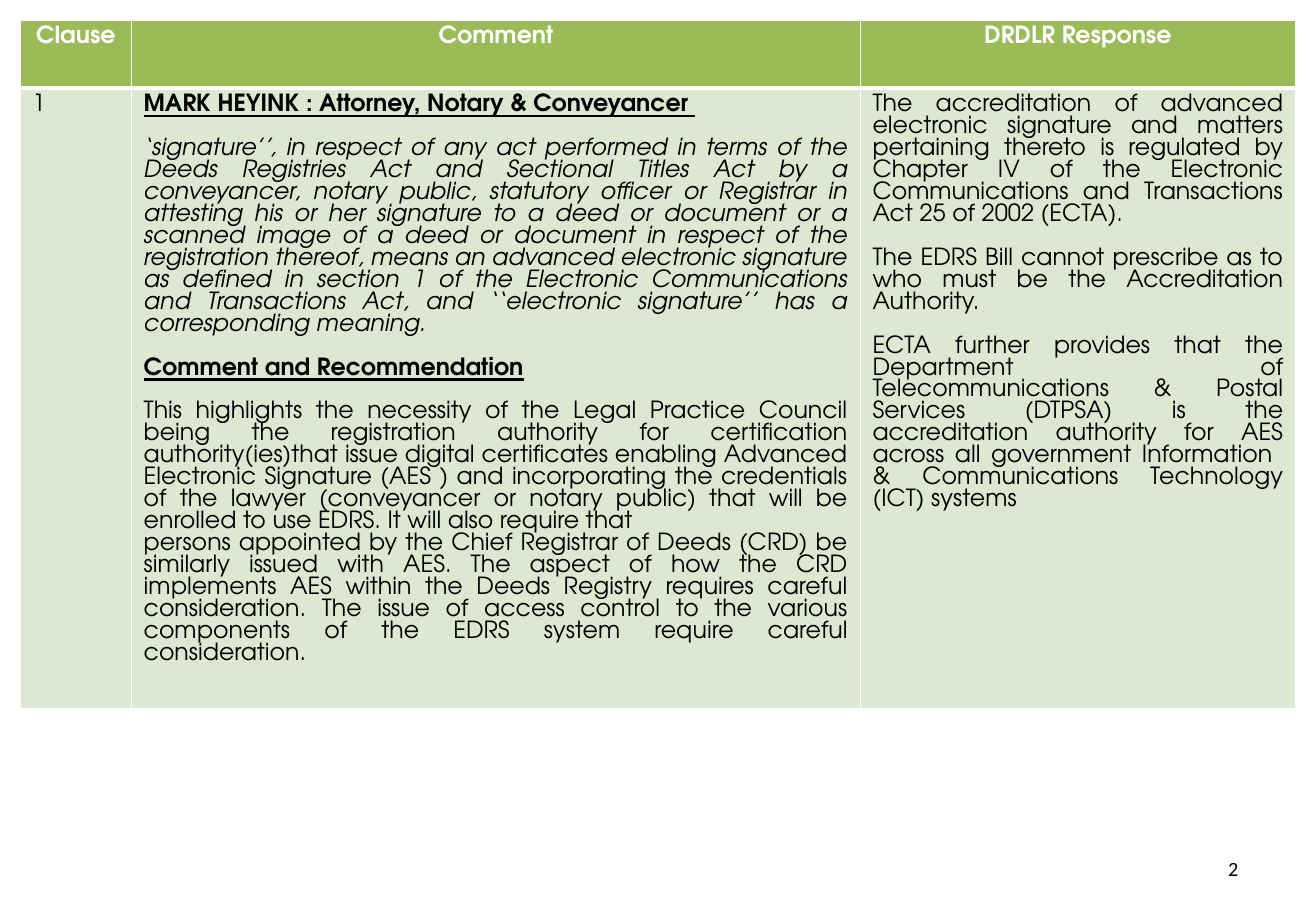
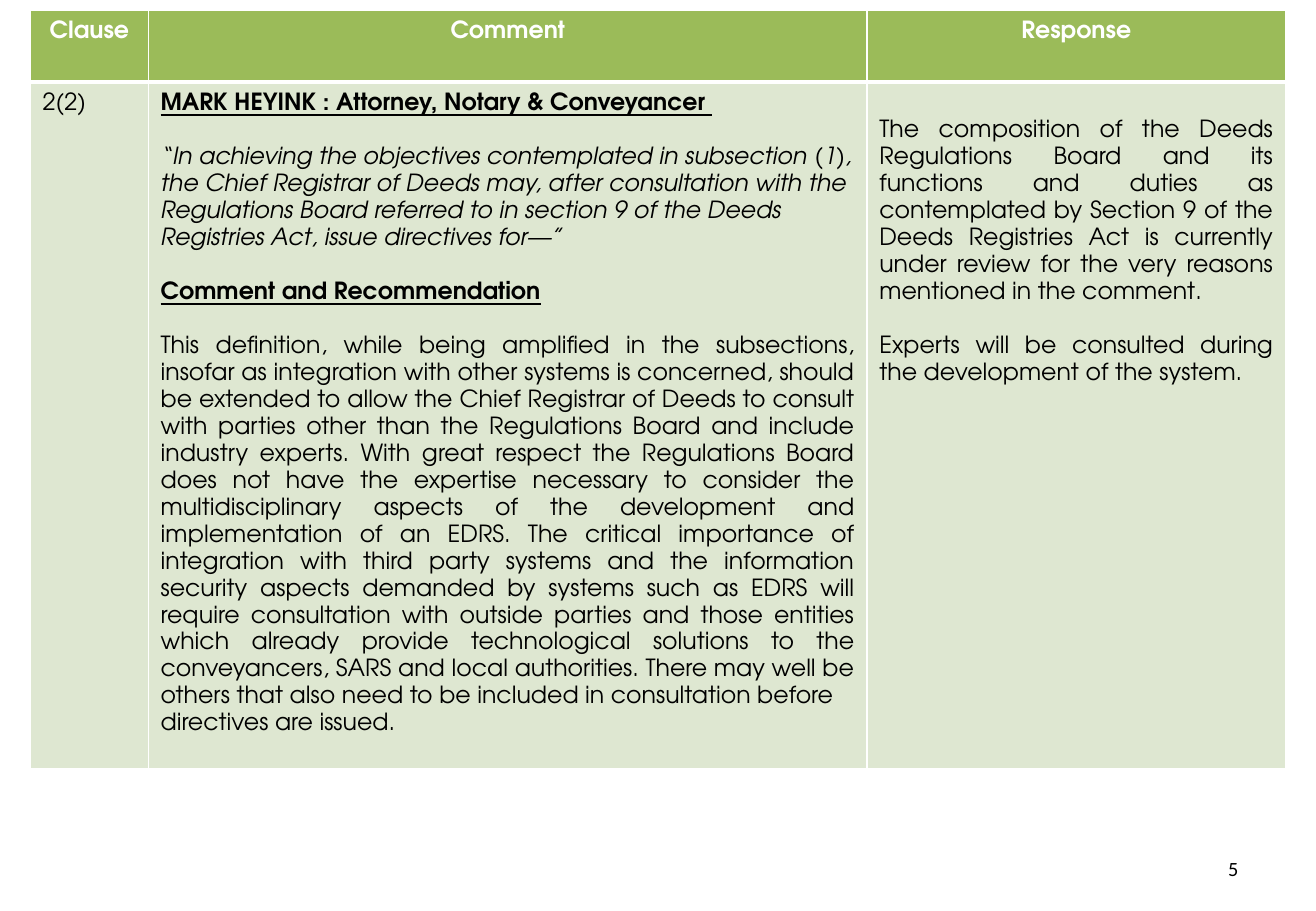
from dataclasses import dataclass

from lxml import etree
from pptx import Presentation
from pptx import util as u
from pptx.dml.color import RGBColor
from pptx.enum import text
from pptx.oxml import ns

GREEN = RGBColor(0x9B, 0xBB, 0x59)
PALE_GREEN = RGBColor(0xDE, 0xE7, 0xD1)
WHITE = RGBColor(0xFF, 0xFF, 0xFF)
BLACK = RGBColor(0, 0, 0)
COLUMNS, ROWS = 130, 90
LEFT, CENTER, JUSTIFY = text.PP_ALIGN.LEFT, text.PP_ALIGN.CENTER, text.PP_ALIGN.JUSTIFY


@dataclass
class Para:
    spans: list
    align: object = LEFT
    gap: bool = False


def plain(words, align=JUSTIFY, gap=False):
    return Para([(words, "")], align, gap)


def heading(words, gap=False):
    return Para([(words, "bu")], LEFT, gap)


class ResponseDeck:
    table_font, table_size = "TeX Gyre Adventor", 14
    number_font, number_size = "Calibri", 12

    def __init__(self):
        self.deck = Presentation()
        self.deck.slide_width = u.Inches(10.83)
        self.deck.slide_height = u.Inches(7.5)
        self.page = None

    def x(self, columns):
        return round(self.deck.slide_width * columns / COLUMNS)

    def y(self, rows):
        return round(self.deck.slide_height * rows / ROWS)

    def add_page(self, number):
        self.page = self.deck.slides.add_slide(self.deck.slide_layouts[6])
        box = self.page.shapes.add_textbox(self.x(93.1), self.y(83.4), self.x(30.4), self.y(4.8))
        frame = box.text_frame
        frame.word_wrap = True
        frame.vertical_anchor = text.MSO_ANCHOR.MIDDLE
        para = frame.paragraphs[0]
        para.alignment = text.PP_ALIGN.RIGHT
        self.add_span(para, number, "", BLACK, self.number_font, self.number_size)

    def add_span(self, para, words, style, color, face, size):
        span = para.add_run()
        span.text = words
        font = span.font
        font.name, font.size = face, u.Pt(size)
        font.color.rgb = color
        font.bold = "b" in style
        font.italic = "i" in style
        font.underline = "u" in style

    def fill_cell(self, cell, paras, color, fill, pitch, top, bottom):
        frame = cell.text_frame
        for index, content in enumerate(paras):
            para = frame.add_paragraph() if index else frame.paragraphs[0]
            para.alignment = content.align
            para.line_spacing = u.Pt(pitch)
            para.space_before = u.Pt(pitch if content.gap else 0)
            for words, style in content.spans:
                self.add_span(para, words, style, color, self.table_font, self.table_size)
        cell.fill.solid()
        cell.fill.fore_color.rgb = fill
        self.add_borders(cell, top, bottom)

    def add_borders(self, cell, top, bottom):
        properties = cell._tc.get_or_add_tcPr()
        widths = {"lnL": 1, "lnR": 1, "lnT": top, "lnB": bottom}
        for index, (side, width) in enumerate(widths.items()):
            line = etree.Element(ns.qn(f"a:{side}"), w=str(u.Pt(width)))
            paint = etree.SubElement(line, ns.qn("a:solidFill"))
            etree.SubElement(paint, ns.qn("a:srgbClr"), val=str(WHITE))
            properties.insert(index, line)

    def add_table(self, left, top, columns, rows, titles, body, pitch):
        frame = self.page.shapes.add_table(
            2, len(columns), self.x(left), self.y(top), self.x(sum(columns)), self.y(sum(rows)))
        table = frame.table
        table.horz_banding = False
        for column, width in zip(table.columns, columns):
            column.width = self.x(width)
        for row, height in zip(table.rows, rows):
            row.height = self.y(height)
        for index, (title, paras) in enumerate(zip(titles, body)):
            title_para = Para([(title, "b")], CENTER)
            self.fill_cell(table.cell(0, index), [title_para], WHITE, GREEN, pitch, 1, 3)
            self.fill_cell(table.cell(1, index), paras, BLACK, PALE_GREEN, pitch, 3, 1)
        return table


COMMENTER = heading("MARK HEYINK : Attorney, Notary & Conveyancer ")
RECOMMENDATION = heading("Comment and Recommendation", gap=True)

SIGNATURE_COMMENT = [
    COMMENTER,
    Para([("‘signature’’, in respect of any act performed in terms of the Deeds Registries Act and "
           "Sectional Titles Act by a conveyancer, notary public, statutory officer or Registrar in "
           "attesting his or her signature to a deed or document or a scanned image of a deed or "
           "document in respect of the registration thereof, means an advanced electronic signature "
           "as defined in section 1 of the Electronic Communications and Transactions Act, and "
           "‘‘electronic signature’’ has a corresponding meaning.", "i")], JUSTIFY, True),
    RECOMMENDATION,
    plain("This highlights the necessity of the Legal Practice Council being the registration "
          "authority for certification authority(ies)that issue digital certificates enabling "
          "Advanced Electronic Signature (AES ) and incorporating the credentials of the lawyer "
          "(conveyancer or notary public) that will be enrolled to use EDRS. It will also require "
          "that", gap=True),
    plain("persons appointed by the Chief Registrar of Deeds (CRD) be similarly issued with AES. "
          "The aspect of how the CRD implements AES within the Deeds Registry requires careful "
          "consideration. The issue of access control to the various components of the EDRS system "
          "require careful consideration."),
]
SIGNATURE_RESPONSE = [
    plain("The accreditation of advanced electronic signature and matters pertaining thereto is "
          "regulated by Chapter IV of the Electronic Communications and Transactions Act 25 of 2002 "
          "(ECTA)."),
    plain("The EDRS Bill cannot prescribe as to who must be the Accreditation Authority.", gap=True),
    plain("ECTA further provides that the Department of Telecommunications & Postal Services "
          "(DTPSA) is the accreditation authority for AES across all government Information  & "
          "Communications Technology (ICT) systems", gap=True),
]
DIRECTIVES_COMMENT = [
    COMMENTER,
    Para([("“In achieving the objectives contemplated in subsection ", "i"), ("(", ""), ("1", "i"),
          (")", ""), (", the Chief Registrar of Deeds may, after consultation with the Regulations "
                      "Board referred to in section 9 of the Deeds Registries Act, issue directives "
                      "for—”", "i")], LEFT, True),
    RECOMMENDATION,
    Para([("This definition, while being amplified in the subsections, insofar as integration with "
           "other systems is concerned, should be extended to allow the Chief Registrar of Deeds to "
           "consult with parties other than the Regulations Board and include industry experts. "
           "With great respect the Regulations Board does not have the expertise necessary to "
           "consider the multidisciplinary aspects of the development and implementation of an "
           "EDRS. ", ""),
          ("The critical importance of integration with third party systems and the information "
           "security aspects demanded by systems such as EDRS will require consultation with "
           "outside parties and those entities which already provide technological solutions to the "
           "conveyancers, SARS and local authorities. There may well be others that also need to be "
           "included in consultation before", "")], JUSTIFY, True),
    plain("directives are issued.", LEFT),
]
DIRECTIVES_RESPONSE = [
    plain("The composition of the Deeds Regulations Board and its functions and duties as "
          "contemplated by Section 9 of the Deeds Registries Act is currently under review for the "
          "very reasons mentioned in the comment."),
    plain("Experts will be consulted during the development of the system.", gap=True),
]


def main():
    builder = ResponseDeck()

    builder.add_page("2")
    builder.add_table(
        2, 2, [11, 72, 43], [6.7, 61.3], ["Clause", "Comment", "DRDLR Response"],
        [[plain("1", LEFT)], SIGNATURE_COMMENT, SIGNATURE_RESPONSE], pitch=13)

    builder.add_page("5")
    table = builder.add_table(
        3, 1, [11.67, 71, 41.33], [7.1, 67.8], ["Clause", "Comment", "Response"],
        [[plain("2(2)", LEFT)], DIRECTIVES_COMMENT, DIRECTIVES_RESPONSE], pitch=16)
    table.cell(1, 2).margin_top = u.Inches(0.05) + u.Pt(16)

    builder.deck.save("out.pptx")


if __name__ == "__main__":
    main()
